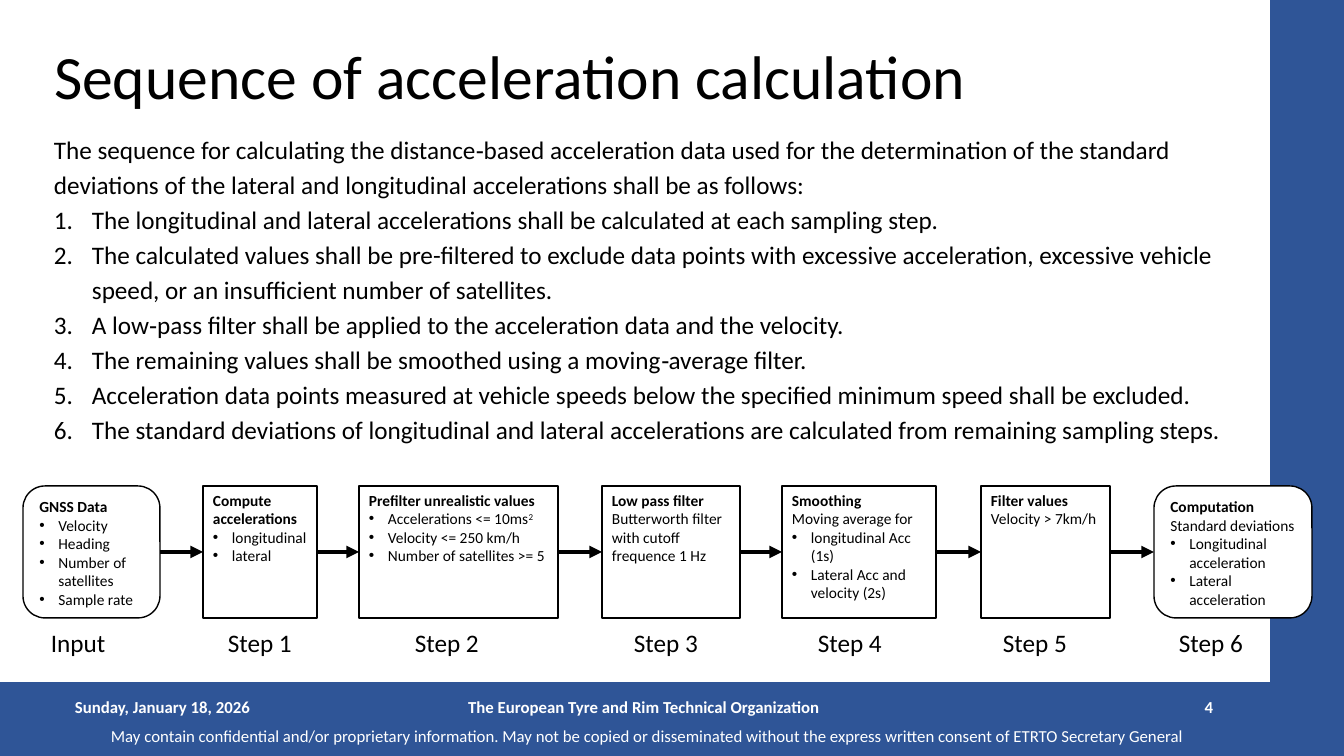
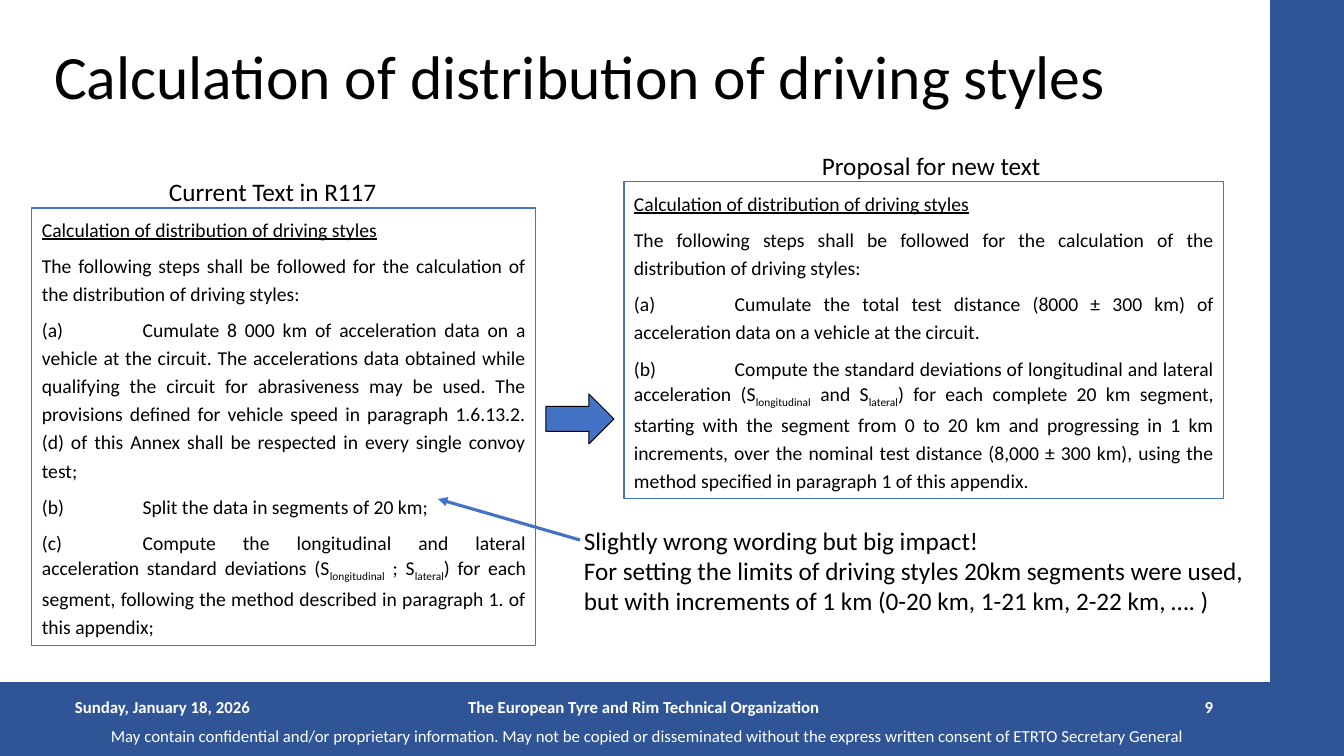
from lxml import etree
from pptx import Presentation
from pptx import util as u
from pptx.dml.color import RGBColor
from pptx.enum import shapes, text
from pptx.oxml.ns import qn

PX = 9144000 / 1008  # EMU in one px
FONT = "Calibri"
COLORS = {"band": "2F5597", "accent": "4472C4", "ink": "000000", "paper": "FFFFFF"}
BULLET, NUMBER = ("buChar", {"char": "•"}), ("buAutoNum", {"type": "arabicPeriod"})
DATE = "Sunday, January 18, 2026"
OWNER = "The European Tyre and Rim Technical Organization"
NOTICE = ("May contain confidential and/or proprietary information. May not be copied or "
          "disseminated without the express written consent of ETRTO Secretary General")

SEQUENCE_INTRO = (
    "The sequence for calculating the distance‑based acceleration data used for the "
    "determination of the standard deviations of the lateral and longitudinal accelerations "
    "shall be as follows:")
SEQUENCE = [
    "The longitudinal and lateral accelerations shall be calculated at each sampling step.",
    "The calculated values shall be pre-filtered to exclude data points with excessive "
    "acceleration, excessive vehicle speed, or an insufficient number of satellites.",
    "A low‑pass filter shall be applied to the acceleration data and the velocity.",
    "The remaining values shall be smoothed using a moving‑average filter.",
    "Acceleration data points measured at vehicle speeds below the specified minimum speed "
    "shall be excluded.",
    "The standard deviations of longitudinal and lateral accelerations are calculated from "
    "remaining sampling steps.",
]
# Label, label left, box left, box width, rounded, heading, bullets
STEPS = [
    ("Input", 41, 23, 137, True, "GNSS Data",
     ["Velocity", "Heading", "Number of satellites", "Sample rate"]),
    ("Step 1", 218, 203, 114, False, "Compute accelerations", ["longitudinal", "lateral"]),
    ("Step 2", 405, 359, 199, False, "Prefilter unrealistic values",
     [("Accelerations <= 10ms", "2"), "Velocity <= 250 km/h", "Number of satellites >= 5"]),
    ("Step 3", 624, 602, 138, False,
     "Low pass filter\vButterworth filter with cutoff frequence 1 Hz", []),
    ("Step 4", 808, 782, 154, False, "Smoothing\vMoving average for",
     ["longitudinal Acc (1s)", "Lateral Acc and velocity (2s)"]),
    ("Step 5", 993, 981, 129, False, "Filter values\vVelocity > 7km/h", []),
    ("Step 6", 1169, 1154, 158, True, "Computation\vStandard deviations",
     ["Longitudinal acceleration", "Lateral acceleration"]),
]

CLAUSE_OPENING = [
    "Calculation of distribution of driving styles",
    "The following steps shall be followed for the calculation of the distribution of "
    "driving styles:",
]
CURRENT_CLAUSES = [
    "(a)\tCumulate 8 000 km of acceleration data on a vehicle at the circuit. The accelerations "
    "data obtained while qualifying the circuit for abrasiveness may be used. The provisions "
    "defined for vehicle speed in paragraph 1.6.13.2. (d) of this Annex shall be respected in "
    "every single convoy test;",
    "(b)\tSplit the data in segments of 20 km;",
    ("(c)\tCompute the longitudinal and lateral acceleration standard deviations (S",
     "longitudinal", " ; S", "lateral",
     ") for each segment, following the method described in paragraph 1. of this appendix;"),
]
PROPOSED_CLAUSES = [
    "(a)\tCumulate the total test distance (8000 ± 300 km) of acceleration data on a vehicle at "
    "the circuit.",
    ("(b)\tCompute the standard deviations of longitudinal and lateral acceleration (S",
     "longitudinal", " and S", "lateral",
     ") for each complete 20 km segment, starting with the segment from 0 to 20 km and "
     "progressing in 1 km increments, over the nominal test distance (8,000 ± 300 km), using "
     "the method specified in paragraph 1 of this appendix."),
]
REMARK = [
    "Slightly wrong wording but big impact!\v"
    "For setting the limits of driving styles 20km segments were used,",
    "but with increments of 1 km (0-20 km, 1-21 km, 2-22 km, …. )",
]


def px(*lengths):
    return [round(length * PX) for length in lengths]


def rgb(name):
    return RGBColor.from_string(COLORS[name])


def write(frame, paragraphs, size, color="ink", bold=False, shift=0, wrap=True,
          anchor=text.MSO_ANCHOR.TOP, align=text.PP_ALIGN.LEFT):
    """Fill a frame; in a tuple every second piece is raised or lowered by shift percent."""
    frame.word_wrap = wrap
    frame.vertical_anchor = anchor
    for index, content in enumerate(paragraphs):
        paragraph = frame.add_paragraph() if index else frame.paragraphs[0]
        pieces = content if isinstance(content, tuple) else (content,)
        paragraph.text = pieces[0]
        paragraph.alignment = align
        for order, piece in enumerate(pieces[1:], 1):
            run = paragraph.add_run()
            run.text = piece
            if order % 2:
                run._r.get_or_add_rPr().set("baseline", str(shift * 1000))
        for run in paragraph.runs:
            run.font.name, run.font.size, run.font.bold = FONT, u.Pt(size), bold
            run.font.color.rgb = rgb(color)
    return frame.paragraphs


def add_list_mark(paragraph, mark, indent):
    tag, attributes = mark
    properties = paragraph._p.get_or_add_pPr()
    left = px(indent)[0]
    properties.set("marL", str(left))
    properties.set("indent", str(-left))
    etree.SubElement(properties, qn("a:buFont"), typeface="Arial" if mark is BULLET else "+mj-lt")
    etree.SubElement(properties, qn("a:" + tag), attributes)


def add_label(slide, box, paragraphs, size=18, **style):
    label = slide.shapes.add_textbox(*px(*box))
    return write(label.text_frame, paragraphs, size, **style)


def add_box(slide, box, fill=None, line="ink", width=1, kind=shapes.MSO_SHAPE.RECTANGLE):
    shape = slide.shapes.add_shape(kind, *px(*box))
    shape.shadow.inherit = False
    if fill:
        shape.fill.solid()
        shape.fill.fore_color.rgb = rgb(fill)
    else:
        shape.fill.background()
    shape.line.color.rgb = rgb(line)
    shape.line.width = u.Pt(width)
    return shape


def add_arrow(slide, start, end, color, width):
    arrow = slide.shapes.add_connector(shapes.MSO_CONNECTOR.STRAIGHT, *px(*start, *end))
    arrow.line.color.rgb = rgb(color)
    arrow.line.width = u.Pt(width)
    etree.SubElement(arrow.line._get_or_add_ln(), qn("a:tailEnd"), type="triangle")
    etree.SubElement(arrow._element.spPr, qn("a:effectLst"))
    return arrow


def add_framed_slide(deck, title, number):
    """Title, bands and footer shared by all slides."""
    slide = deck.slides.add_slide(deck.slide_layouts[5])
    for band in [(0, 683, 1343, 73), (1271, 0, 73, 756)]:
        add_box(slide, band, "band", "band")
    middle = text.MSO_ANCHOR.MIDDLE
    add_label(slide, (101, 727, 1142, 17), [NOTICE], 12, color="paper", anchor=middle)
    for left, width, words, align in [(65, 302, DATE, text.PP_ALIGN.LEFT),
                                      (417, 454, OWNER, text.PP_ALIGN.CENTER),
                                      (921, 302, str(number), text.PP_ALIGN.RIGHT)]:
        add_label(slide, (left, 687, width, 40), [words], 12, color="paper", bold=True,
                  anchor=middle, align=align)
    heading = slide.shapes.title
    heading.left, heading.top, heading.width, heading.height = px(44, 35, 1159, 90)
    write(heading.text_frame, [title], 44, anchor=middle)[0].line_spacing = 0.9
    return slide


def add_sequence_list(slide, box):
    paragraphs = add_label(slide, box, [SEQUENCE_INTRO, *SEQUENCE])
    for paragraph in paragraphs:
        paragraph.line_spacing = u.Pt(25)
    for paragraph in paragraphs[1:]:
        add_list_mark(paragraph, NUMBER, 38)


def add_process(slide, top, height):
    """Row of step boxes joined by arrows, with a label under each."""
    previous = None
    for label, label_left, left, width, rounded, heading, bullets in STEPS:
        kind = shapes.MSO_SHAPE.ROUNDED_RECTANGLE if rounded else shapes.MSO_SHAPE.RECTANGLE
        step = add_box(slide, (left, top, width, height), "paper", kind=kind)
        paragraphs = write(step.text_frame, [heading, *bullets], 11, shift=30)
        paragraphs[0].runs[0].font.bold = True
        for paragraph in paragraphs[1:]:
            add_list_mark(paragraph, BULLET, 19)
        if previous:
            arrow = add_arrow(slide, (0, 0), (left, top), "ink", 3)
            arrow.begin_connect(previous, 3)
            arrow.end_connect(step, 1)
        add_label(slide, (label_left, top + height + 4, 85, 40), [label], wrap=False)
        previous = step


def add_clause_panel(slide, box, caption, caption_left, clauses):
    left, top, width, height = box
    add_label(slide, (caption_left, top - 37, 240, 40), [caption], wrap=False)
    panel = add_box(slide, box, line="accent", width=0.75)
    paragraphs = write(panel.text_frame, CLAUSE_OPENING + clauses, 14, shift=-25,
                       align=text.PP_ALIGN.JUSTIFY)
    for paragraph in paragraphs:
        tabs = etree.SubElement(paragraph._p.get_or_add_pPr(), qn("a:tabLst"))
        etree.SubElement(tabs, qn("a:tab"), pos=str(u.Inches(1)), algn="l")
        paragraph.line_spacing = u.Pt(20)
        paragraph.space_after = u.Pt(6)
    paragraphs[0].runs[0].font.underline = True


def build_sequence_slide(deck):
    slide = add_framed_slide(deck, "Sequence of acceleration calculation", 4)
    add_sequence_list(slide, (44, 125, 1195, 327))
    add_process(slide, 486, 132)


def build_comparison_slide(deck):
    slide = add_framed_slide(deck, "Calculation of distribution of driving styles", 9)
    add_clause_panel(slide, (32, 208, 504, 438), "Current Text in R117", 159, CURRENT_CLAUSES)
    add_clause_panel(slide, (624, 182, 600, 317), "Proposal for new text", 812, PROPOSED_CLAUSES)
    # Change from the current text to the proposal
    add_box(slide, (546, 394, 68, 50), "accent", width=0.75, kind=shapes.MSO_SHAPE.RIGHT_ARROW)
    # Remark pointing at the clause in question
    add_arrow(slide, (580, 540), (438, 499), "accent", 2.25)
    add_label(slide, (574, 520, 688, 102), REMARK, wrap=False)


def main():
    deck = Presentation()
    deck.slide_width, deck.slide_height = px(1344, 756)
    build_sequence_slide(deck)
    build_comparison_slide(deck)
    deck.save("out.pptx")


if __name__ == "__main__":
    main()
